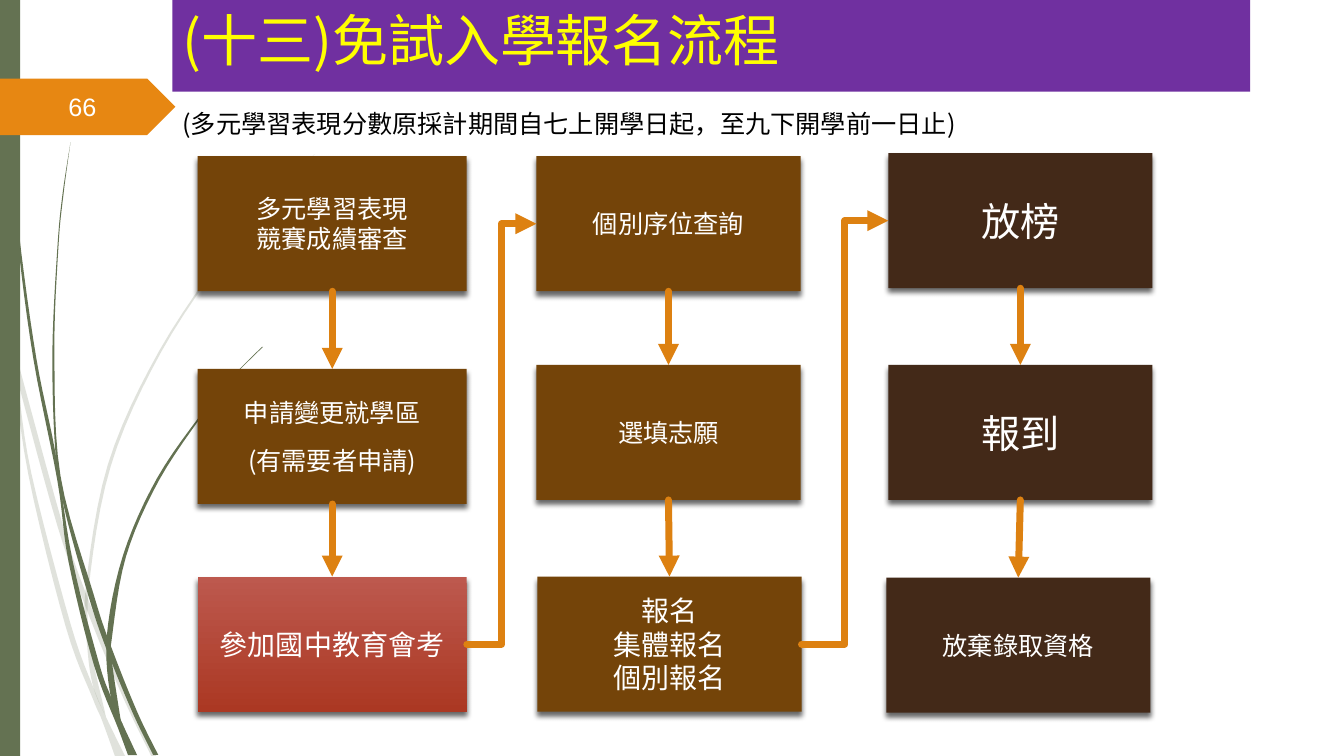
"""Build the slide that shows the exam-free admission application flow."""
from lxml import etree
from pptx import Presentation
from pptx import util as u
from pptx.dml.color import RGBColor
from pptx.enum import shapes, text
from pptx.oxml import ns

CJK = "Noto Sans CJK SC"
GREEN, BROWN, DARK, RED = "647252", "744409", "432918", "AB3823"
colour = RGBColor.from_string


def smooth(edge, steps=6):
    """Return points of a Catmull-Rom curve through the edge, in EMU."""
    padded = [edge[0], *edge, edge[-1]]
    points = []
    for a, b, c, d in zip(padded, padded[1:], padded[2:], padded[3:]):
        for step in range(steps):
            t = step / steps
            points.append(tuple(
                u.Inches(q + t / 2 * (r - p + t * (2 * p - 5 * q + 4 * r - s + t * (3 * (q - r) + s - p))))
                for p, q, r, s in zip(a, b, c, d)))
    return points + [tuple(u.Inches(value) for value in edge[-1])]


def write(shape, content, size, ink, font=CJK, align=None, anchor=text.MSO_ANCHOR.TOP):
    """Put formatted text in a shape."""
    frame = shape.text_frame
    frame.text = content
    frame.word_wrap = True
    frame.auto_size = text.MSO_AUTO_SIZE.NONE
    frame.vertical_anchor = anchor
    for para in frame.paragraphs:
        para.alignment = align
        for span in para.runs:
            span.font.size = u.Pt(size)
            span.font.name = font
            span.font.color.rgb = colour(ink)
            etree.SubElement(span.font._element, ns.qn("a:ea"), typeface=font)


deck = Presentation()
deck.slide_width, deck.slide_height = u.Inches(13.33), u.Inches(7.5)
page = deck.slides.add_slide(deck.slide_layouts[5])

strands = [
    (20, [(0, 2.82), (0.08, 3.22), (0.17, 3.76), (0.31, 4.69), (0.7, 6.19), (0.93, 6.83), (1.05, 7.11), (1.24, 7.5)],
     [(0, 2.99), (0.1, 3.44), (0.28, 4.7), (0.65, 6.21), (0.92, 6.93), (1.01, 7.14), (1.14, 7.5)]),
    (20, [(0.14, 3.45), (0.62, 5.2), (0.88, 5.96), (1.27, 6.92), (1.55, 7.5)],
     [(0.17, 3.76), (0.57, 5.22), (0.88, 6.1), (1.23, 6.94), (1.5, 7.5)]),
    (20, [(3.12, 1.53), (2.68, 1.97), (2.28, 2.44), (1.58, 3.48), (1.07, 4.61), (0.85, 5.84), (0.87, 6.46),
          (0.93, 6.83), (1.05, 7.11)],
     [(3.12, 1.53), (2.68, 1.98), (2.29, 2.45), (1.6, 3.49), (1.1, 4.62), (0.88, 5.84), (0.91, 6.46), (1.04, 7.06)]),
    (100, [(0.03, 0), (0.08, 1.09), (0.19, 2.32), (0.36, 3.55), (0.55, 4.49), (0.72, 5.56), (0.98, 6.57),
           (1.1, 6.91), (1.22, 7.19), (1.36, 7.49)],
     [(0.03, 0), (0.07, 1.1), (0.17, 2.33), (0.33, 3.55), (0.57, 4.77), (0.68, 5.57), (0.93, 6.59),
      (1.17, 7.22), (1.27, 7.49)]),
    (100, [(0.7, 1.41), (0.62, 1.93), (0.57, 2.45), (0.52, 3.49), (0.55, 4.49), (0.64, 5.05), (0.88, 5.92),
           (1.06, 6.45), (1.32, 7.08), (1.52, 7.49)],
     [(0.7, 1.41), (0.63, 1.93), (0.58, 2.45), (0.54, 3.49), (0.6, 4.72), (0.93, 5.9), (1.1, 6.41),
      (1.36, 7.06), (1.57, 7.49)]),
    (100, [(2.6, 3.44), (2.31, 3.73), (2.04, 4.05), (1.56, 4.74), (1.22, 5.51), (1.06, 6.31), (1.1, 6.92),
           (1.22, 7.19)],
     [(2.61, 3.44), (2.31, 3.74), (2.05, 4.06), (1.58, 4.76), (1.25, 5.52), (1.11, 6.33), (1.11, 6.56), (1.2, 7.16)]),
]
for opacity, near, far in strands:
    outline = smooth(near) + smooth(far)[::-1]
    builder = page.shapes.build_freeform(*outline[0])
    builder.add_line_segments(outline[1:], close=True)
    strand = builder.convert_to_shape()
    strand.shadow.inherit = False
    strand.fill.solid()
    strand.fill.fore_color.rgb = colour(GREEN)
    strand.line.fill.background()
    for tint in strand._element.spPr.iter(ns.qn("a:srgbClr")):
        etree.SubElement(tint, ns.qn("a:alpha"), val=str(opacity * 1000))

for kind, place, tint in [
    (shapes.MSO_SHAPE.RECTANGLE, (0, 0, 0.2, 7.5), GREEN),
    (shapes.MSO_SHAPE.PENTAGON, (0, 0.78, 1.74, 0.56), "E78712"),
]:
    ornament = page.shapes.add_shape(kind, *map(u.Inches, place))
    ornament.shadow.inherit = False
    ornament.fill.solid()
    ornament.fill.fore_color.rgb = colour(tint)
    ornament.line.fill.background()

title = page.shapes.title
title.left, title.top, title.width, title.height = map(u.Inches, (1.71, 0, 10.69, 0.91))
title.fill.solid()
title.fill.fore_color.rgb = colour("7030A0")
write(title, "(十三)免試入學報名流程", 40, "FFFF00", align=text.PP_ALIGN.LEFT)

columns = [
    (2.67, [(1.96, 1.55, "多元學習表現\n競賽成績審查", 18, BROWN),
            (1.96, 3.66, "申請變更就學區\n(有需要者申請)", 18, BROWN),
            (1.96, 5.72, "參加國中教育會考", 20, RED)]),
    (2.62, [(5.32, 1.55, "個別序位查詢", 18, BROWN),
            (5.32, 3.62, "選填志願", 18, BROWN),
            (5.33, 5.72, "報名\n集體報名\n個別報名", 20, BROWN)]),
    (2.62, [(8.81, 1.52, "放榜", 28, DARK),
            (8.81, 3.62, "報到", 28, DARK),
            (8.79, 5.73, "放棄錄取資格", 18, DARK)]),
]
flow = []
for width, steps in columns:
    for left, top, label, size, tint in steps:
        box = page.shapes.add_shape(shapes.MSO_SHAPE.RECTANGLE, *map(u.Inches, (left, top, width, 1.34)))
        if tint == RED:
            box.fill.gradient()
            box.fill.gradient_angle = 270
            for stop, shade in zip(box.fill.gradient_stops, ("BD594E", RED)):
                stop.color.rgb = colour(shade)
        else:
            box.fill.solid()
            box.fill.fore_color.rgb = colour(tint)
        box.line.fill.background()
        box.shadow.inherit = False
        effects = box._element.spPr.find(ns.qn("a:effectLst"))
        shadow = etree.SubElement(effects, ns.qn("a:outerShdw"), blurRad=str(u.Pt(4)), dist=str(u.Pt(3)),
                                  dir="5400000", rotWithShape="0")
        black = etree.SubElement(shadow, ns.qn("a:srgbClr"), val="000000")
        etree.SubElement(black, ns.qn("a:alpha"), val="60000")
        write(box, label, size, "FFFFFF", align=text.PP_ALIGN.CENTER, anchor=text.MSO_ANCHOR.MIDDLE)
        flow.append(box)
flow[1].text_frame.paragraphs[1].space_before = u.Pt(12.8)

for index, (start, end) in enumerate(zip(flow, flow[1:])):
    turns = index % 3 == 2
    kind = shapes.MSO_CONNECTOR.ELBOW if turns else shapes.MSO_CONNECTOR.STRAIGHT
    arrow = page.shapes.add_connector(kind, 0, 0, 0, 0)
    arrow.begin_connect(start, 3 if turns else 2)
    arrow.end_connect(end, 1 if turns else 0)
    arrow.line.color.rgb = colour("DD8111")
    arrow.line.width = u.Pt(5)
    stroke = arrow.line._get_or_add_ln()
    stroke.set("cap", "rnd")
    etree.SubElement(stroke, ns.qn("a:tailEnd"), type="triangle")
    etree.SubElement(arrow._element.spPr, ns.qn("a:effectLst"))

period = page.shapes.add_textbox(*map(u.Inches, (1.71, 1.03, 11.07, 0.4)))
write(period, "(多元學習表現分數原採計期間自七上開學日起，至九下開學前一日止)", 18, "000000")
number = page.shapes.add_textbox(*map(u.Inches, (0.58, 0.86, 0.85, 0.4)))
write(number, "66", 18, "FFFFFF", font="Arial", anchor=text.MSO_ANCHOR.MIDDLE)

deck.save("out.pptx")
